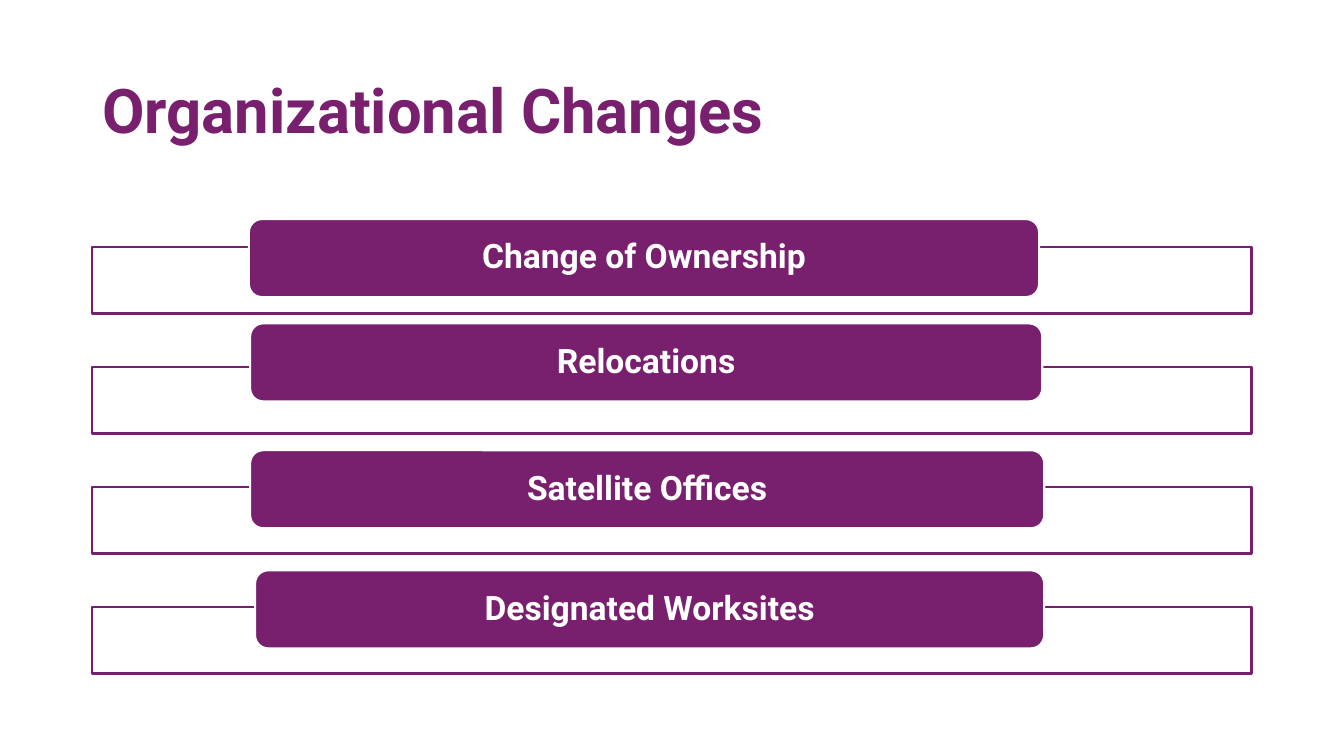
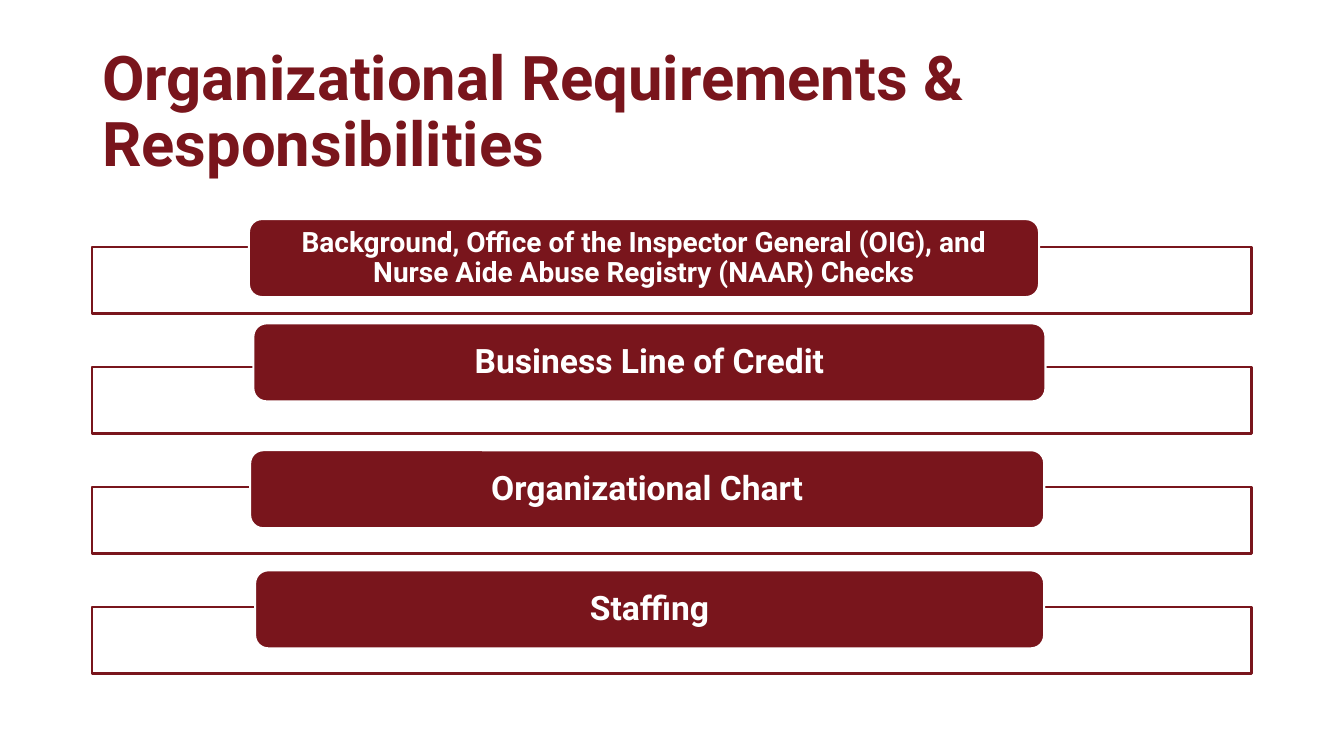
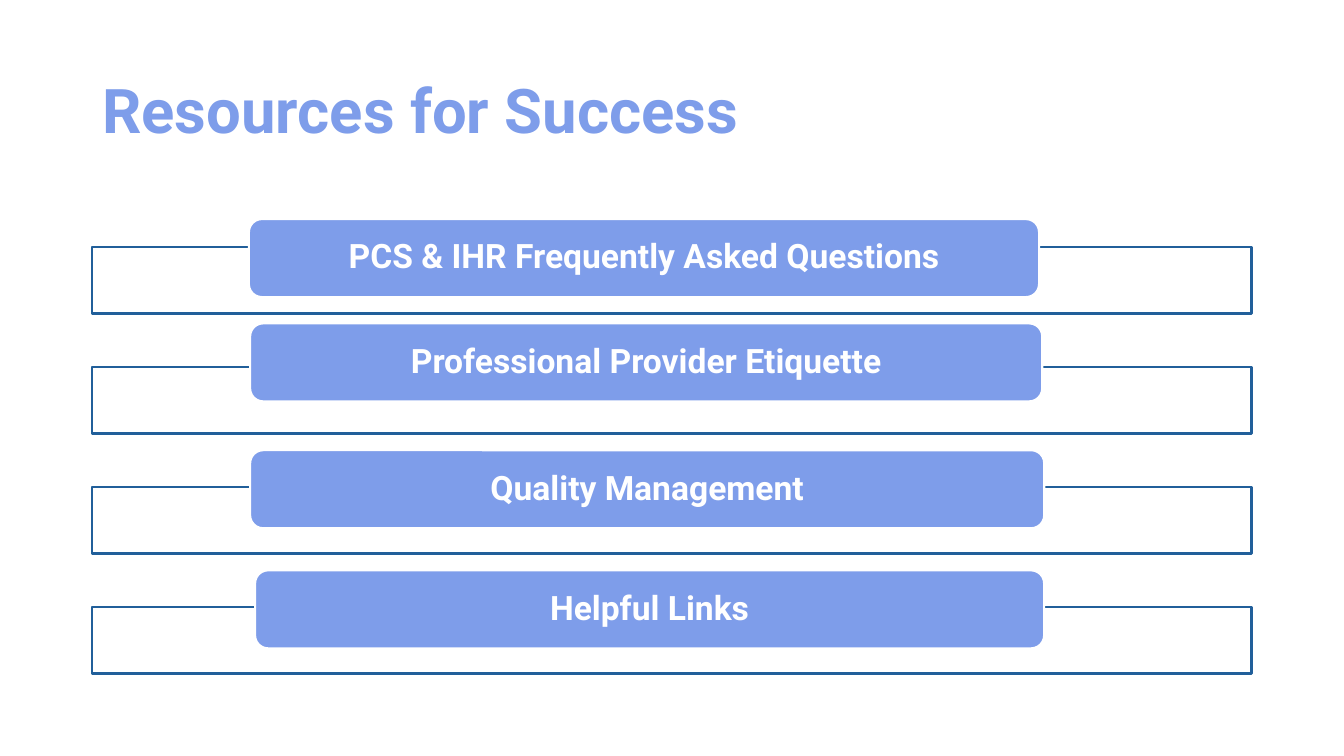
from pptx import Presentation
from pptx.dml.color import RGBColor
from pptx.enum.shapes import MSO_SHAPE
from pptx.enum.text import MSO_ANCHOR, PP_ALIGN
from pptx.util import Pt

RECTANGLE = MSO_SHAPE.RECTANGLE
ROUNDED = MSO_SHAPE.ROUNDED_RECTANGLE
MIDDLE = MSO_ANCHOR.MIDDLE
LEFT, CENTER = PP_ALIGN.LEFT, PP_ALIGN.CENTER

# Shared style
FONT = "Roboto"
COLORS = {
    "white": "FFFFFF",
    "purple": "78206E",
    "maroon": "79151C",
    "periwinkle": "7E9DEA",
    "blue": "215F9A",
}
TITLE_SIZE, LABEL_SIZE, SMALL_LABEL_SIZE = 44, 24, 20
LINE_WIDTH = 1.5

# Shared layout, in points
MARGIN, CONTENT_WIDTH = 66, 828
TITLE_TOP, TITLE_HEIGHT = 28.8, 104.4
BAND_TOP, BAND_STEP, BAND_HEIGHT = 176.4, 85.7, 47.6
PILL_HEIGHT, PILL_INSET = 55.7, 21.6
PILL_PLACES = [  # left, top, width
    (177.8, 156.5, 564.4),
    (178.7, 231, 565.8),
    (178.7, 321.6, 567.2),
    (182.2, 407.4, 563.6),
]

# Title, main colour, band outline, labels, left edge of the second pill
SLIDES = [
    ("Organizational Changes", "purple", "purple",
     ["Change of Ownership", "Relocations",
      "Satellite Offices", "Designated Worksites"], 178.7),
    ("Organizational Requirements & Responsibilities", "maroon", "maroon",
     ["Background, Office of the Inspector General (OIG), and "
      "Nurse Aide Abuse Registry (NAAR) Checks",
      "Business Line of Credit", "Organizational Chart", "Staffing"], 181),
    ("Resources for Success", "periwinkle", "blue",
     ["PCS & IHR Frequently Asked Questions",
      "Professional Provider Etiquette",
      "Quality Management", "Helpful Links"], 178.7),
]


def add_box(slide, kind, left, top, width, height, fill, line):
    shape = slide.shapes.add_shape(kind, Pt(left), Pt(top), Pt(width), Pt(height))
    shape.shadow.inherit = False
    shape.fill.solid()
    shape.fill.fore_color.rgb = RGBColor.from_string(COLORS[fill])
    shape.line.color.rgb = RGBColor.from_string(COLORS[line])
    shape.line.width = Pt(LINE_WIDTH)
    return shape


def write_text(shape, text, size, color, alignment):
    frame = shape.text_frame
    frame.word_wrap = True
    frame.vertical_anchor = MIDDLE
    paragraph = frame.paragraphs[0]
    paragraph.alignment = alignment
    paragraph.line_spacing = 0.9
    run = paragraph.add_run()
    run.text = text
    run.font.name = FONT
    run.font.size = Pt(size)
    run.font.bold = True
    run.font.color.rgb = RGBColor.from_string(COLORS[color])
    return frame


presentation = Presentation()
presentation.slide_width = Pt(960)
presentation.slide_height = Pt(540)
blank_layout = presentation.slide_layouts[6]

for title, color, outline, labels, second_left in SLIDES:
    slide = presentation.slides.add_slide(blank_layout)

    # Title
    title_box = slide.shapes.add_textbox(
        Pt(MARGIN), Pt(TITLE_TOP), Pt(CONTENT_WIDTH), Pt(TITLE_HEIGHT))
    title_frame = write_text(title_box, title, TITLE_SIZE, color, LEFT)
    title_frame.paragraphs[0].space_after = Pt(6)

    # Outlined bands, each with a labelled pill
    for row, (label, (left, top, width)) in enumerate(zip(labels, PILL_PLACES)):
        add_box(slide, RECTANGLE, MARGIN, BAND_TOP + row * BAND_STEP,
                CONTENT_WIDTH, BAND_HEIGHT, "white", outline)
        pill_left = second_left if row == 1 else left
        pill = add_box(slide, ROUNDED, pill_left, top, width, PILL_HEIGHT,
                       color, "white")
        size = SMALL_LABEL_SIZE if len(label) > 50 else LABEL_SIZE
        frame = write_text(pill, label, size, "white", CENTER)
        frame.margin_left = frame.margin_right = Pt(PILL_INSET)
        frame.margin_top = frame.margin_bottom = 0

presentation.save("out.pptx")
